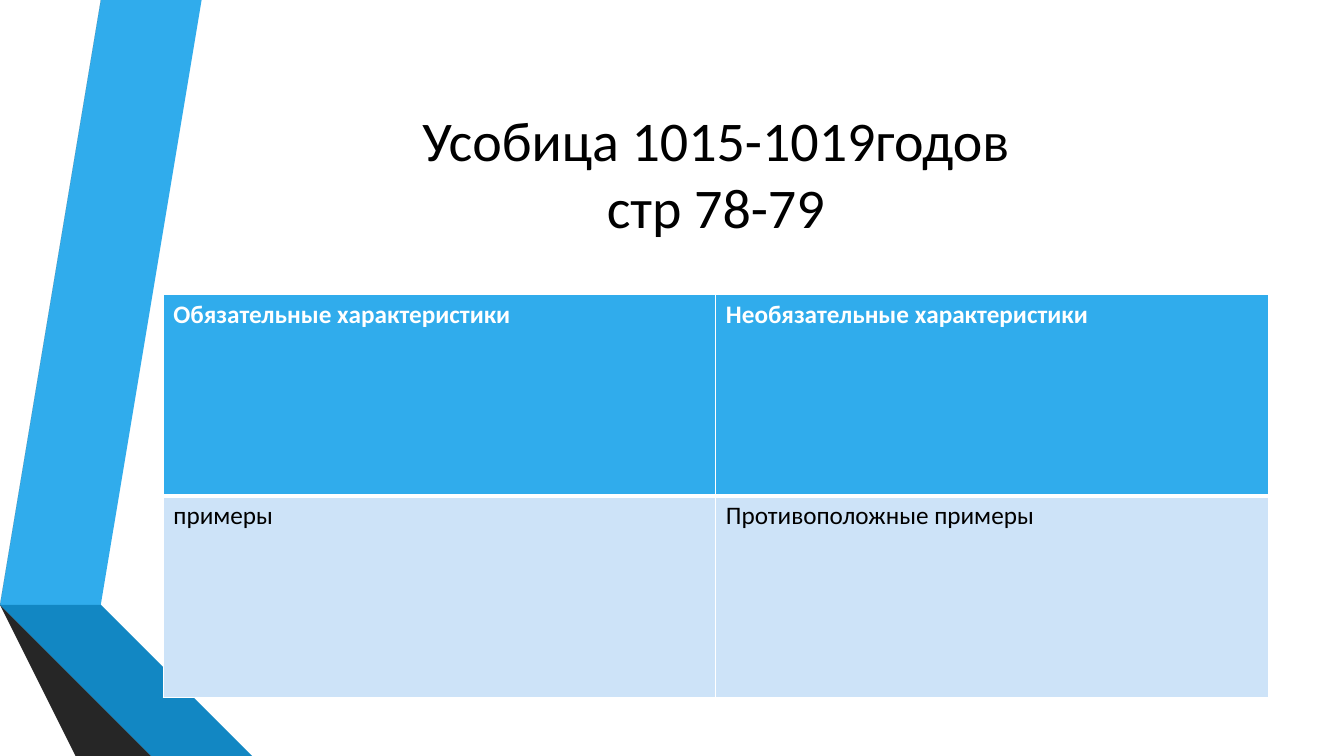
import pptx
import pptx.dml.color
import pptx.enum.text
import pptx.oxml
import pptx.oxml.ns
import pptx.util

TITLE = "Усобица 1015-1019годов\nстр 78-79"
CELLS = [
    ["Обязательные характеристики", "Необязательные характеристики"],
    ["примеры", "Противоположные примеры"],
]
THEME = {
    "font": "Calibri", "title_size": 40, "cell_size": 18,
    "black": "000000", "white": "FFFFFF",
    "header": "30ACEC", "body": "CDE3F8",
    "blue": "30ACEC", "blue_side": "1287C3", "blue_edge": "0C5A82",
    "grey": "595959", "grey_side": "404040", "grey_edge": "262626",
}
WIDTH, HEIGHT = 13.33, 7.5
LEFT, CONTENT_W = 1.62, 10.96
TITLE_TOP, TITLE_H = 0.75, 1.92
TABLE_TOP, ROW_H = 2.92, 2

# Ribbon facets from back to front: colour and corner points
RIBBONS = [
    ("blue", [(0.5, 5.78), (0.77, 5.83), (1.73, 0), (1.45, 0)]),
    ("grey", [(1.39, 0), (1.11, 0), (0.16, 5.73), (0.44, 5.77)]),
    ("grey_edge", [(0.16, 5.73), (1.45, HEIGHT), (1.51, HEIGHT)]),
    ("blue_edge", [(0.5, 5.79), (2.08, HEIGHT), (2.14, HEIGHT)]),
    ("blue_side", [(0.5, 5.78), (2.14, HEIGHT), (2.83, HEIGHT), (0.77, 5.83)]),
    ("grey_side", [(2.02, HEIGHT), (0.48, 5.83), (0.44, 5.77), (0.16, 5.73), (1.51, HEIGHT)]),
]


def rgb(name):
    return pptx.dml.color.RGBColor.from_string(THEME[name])


def write(tf, text, size, color, bold=False, align=pptx.enum.text.PP_ALIGN.LEFT):
    p = tf.paragraphs[0]
    p.alignment = align
    for i, line in enumerate(text.split("\n")):
        if i:
            p.add_line_break()
        r = p.add_run()
        r.text = line
        r.font.name = THEME["font"]
        r.font.size = pptx.util.Pt(THEME[size])
        r.font.bold = bold
        r.font.color.rgb = rgb(color)


def add_ribbon(slide, color, points):
    builder = slide.shapes.build_freeform(*points[0], scale=pptx.util.Inches(1))
    builder.add_line_segments(points[1:], close=True)
    sp = builder.convert_to_shape()
    sp.shadow.inherit = False
    sp.fill.solid()
    sp.fill.fore_color.rgb = rgb(color)
    sp.line.fill.background()


def set_borders(cell, **widths):
    """Draw white borders; widths in points, keyed L, R, T, B."""
    tcPr = cell._tc.get_or_add_tcPr()
    for side, width in widths.items():
        tcPr.append(pptx.oxml.parse_xml(
            f'<a:ln{side} {pptx.oxml.ns.nsdecls("a")} w="{pptx.util.Pt(width)}">'
            f'<a:solidFill><a:srgbClr val="{THEME["white"]}"/></a:solidFill></a:ln{side}>'))


def main():
    prs = pptx.Presentation()
    prs.slide_width = pptx.util.Inches(WIDTH)
    prs.slide_height = pptx.util.Inches(HEIGHT)
    slide = prs.slides.add_slide(prs.slide_layouts[5])

    for color, points in RIBBONS:
        add_ribbon(slide, color, points)

    title = slide.shapes.title
    title.left, title.top, title.width, title.height = map(
        pptx.util.Inches, (LEFT, TITLE_TOP, CONTENT_W, TITLE_H))
    tf = title.text_frame
    tf.auto_size = pptx.enum.text.MSO_AUTO_SIZE.NONE
    tf.vertical_anchor = pptx.enum.text.MSO_ANCHOR.MIDDLE
    write(tf, TITLE, "title_size", "black", align=pptx.enum.text.PP_ALIGN.CENTER)

    box = map(pptx.util.Inches, (LEFT, TABLE_TOP, CONTENT_W, ROW_H * len(CELLS)))
    table = slide.shapes.add_table(len(CELLS), len(CELLS[0]), *box).table
    for i, row in enumerate(CELLS):
        header = i == 0
        for j, text in enumerate(row):
            cell = table.cell(i, j)
            set_borders(cell, L=1, R=1, T=1 if header else 3, B=3 if header else 1)
            cell.fill.solid()
            cell.fill.fore_color.rgb = rgb("header" if header else "body")
            write(cell.text_frame, text, "cell_size",
                  "white" if header else "black", bold=header)

    prs.save("out.pptx")


if __name__ == "__main__":
    main()
